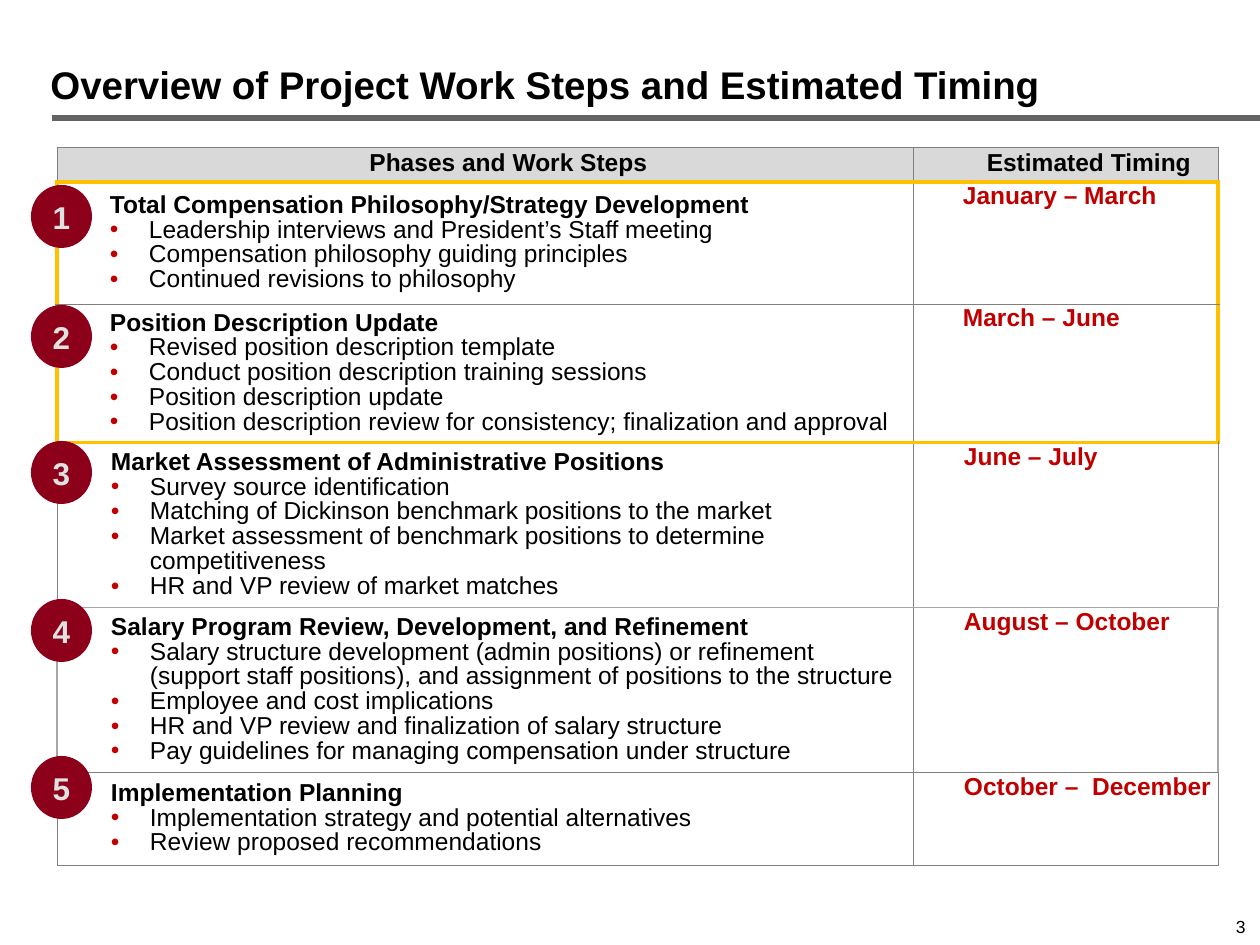
from dataclasses import dataclass

from lxml import etree
from pptx import Presentation
from pptx.dml.color import RGBColor
from pptx.enum.shapes import MSO_CONNECTOR, MSO_SHAPE
from pptx.enum.text import MSO_ANCHOR, PP_ALIGN
from pptx.oxml.ns import qn
from pptx.util import Emu, Pt

LEFT, CENTER, RIGHT = PP_ALIGN.LEFT, PP_ALIGN.CENTER, PP_ALIGN.RIGHT
TOP, MIDDLE, BOTTOM = MSO_ANCHOR.TOP, MSO_ANCHOR.MIDDLE, MSO_ANCHOR.BOTTOM
OVAL, STRAIGHT = MSO_SHAPE.OVAL, MSO_CONNECTOR.STRAIGHT
PX_PER_INCH = 126


@dataclass(frozen=True)
class Theme:
    font: str = "Arial"
    ink: str = "000000"
    accent: str = "C00000"
    badge: str = "8C0019"
    badge_ink: str = "E0E1E1"
    header: str = "D9D9D9"
    rule: str = "616365"
    title_size: int = 22
    table_size: int = 14
    badge_size: int = 18
    page_size: int = 10
    line_spacing: float = 0.9


@dataclass(frozen=True)
class Edge:
    color: str
    points: float


@dataclass(frozen=True)
class Phase:
    title: str
    steps: tuple[str, ...]
    timing: str
    height: int
    badge_top: int
    indent: int
    side: Edge
    bottom: Edge


THEME = Theme()
GRAY, GOLD, SILVER = Edge("808080", 0.5), Edge("FFC000", 2.25), Edge("A6A6A6", 1)

TABLE_LEFT, TABLE_TOP = 57, 147
COLUMNS = (856, 305)
HEADER_HEIGHT = 35
HEADINGS = ("Phases and Work Steps", "Estimated Timing")
HEADER_INDENT, HANGING = 47, 39

PHASES = (
    Phase("Total Compensation Philosophy/Strategy Development",
          ("Leadership interviews and President’s Staff meeting",
           "Compensation philosophy guiding principles",
           "Continued revisions to philosophy"),
          "January – March", 122, 185, 47, GOLD, GRAY),
    Phase("Position Description Update",
          ("Revised position description template",
           "Conduct position description training sessions",
           "Position description update",
           "Position description review for consistency; finalization and approval"),
          "March – June", 129, 305, 47, GOLD, GOLD),
    Phase("Market Assessment of Administrative Positions",
          ("Survey source identification",
           "Matching of Dickinson benchmark positions to the market",
           "Market assessment of benchmark positions to determine competitiveness",
           "HR and VP review of market matches"),
          "June – July", 157, 441, 48, GRAY, SILVER),
    Phase("Salary Program Review, Development, and Refinement",
          ("Salary structure development (admin positions) or refinement "
           "(support staff positions), and assignment of positions to the structure",
           "Employee and cost implications",
           "HR and VP review and finalization of salary structure",
           "Pay guidelines for managing compensation under structure"),
          "August – October", 154, 599, 48, SILVER, GRAY),
    Phase("Implementation Planning",
          ("Implementation strategy and potential alternatives",
           "Review proposed recommendations"),
          "October –  December", 93, 756, 48, GRAY, GRAY),
)


def px(length: int) -> Emu:
    return Emu(round(length * 914400 / PX_PER_INCH))


def apply(target, formats: dict) -> None:
    for name, value in formats.items():
        setattr(target, name, value)


def write(paragraph, text: str, size: int, color: str, bold: bool = True,
          align=LEFT, spacing: float = THEME.line_spacing) -> None:
    apply(paragraph, {"alignment": align, "line_spacing": spacing})
    run = paragraph.add_run()
    run.text = text
    apply(run.font, {"name": THEME.font, "size": Pt(size), "bold": bold})
    run.font.color.rgb = RGBColor.from_string(color)


def add_solid(parent, color: str) -> None:
    fill = etree.SubElement(parent, qn("a:solidFill"))
    etree.SubElement(fill, qn("a:srgbClr"), val=color)


def indent(paragraph, margin: int, hanging: int = 0) -> None:
    properties = paragraph._p.get_or_add_pPr()
    properties.set("marL", str(px(margin + hanging)))
    properties.set("indent", str(-px(hanging)))
    if hanging:
        bullet_color = etree.SubElement(properties, qn("a:buClr"))
        etree.SubElement(bullet_color, qn("a:srgbClr"), val=THEME.accent)
        etree.SubElement(properties, qn("a:buFont"), typeface=THEME.font)
        etree.SubElement(properties, qn("a:buChar"), char="•")


def set_borders(cell, left: Edge, right: Edge, top: Edge, bottom: Edge) -> None:
    properties = cell._tc.get_or_add_tcPr()
    sides = {"L": left, "R": right, "T": top, "B": bottom}
    for position, (side, edge) in enumerate(sides.items()):
        line = etree.Element(qn(f"a:ln{side}"), w=str(Pt(edge.points)))
        add_solid(line, edge.color)
        properties.insert(position, line)


def format_cell(cell, anchor, inset: int) -> None:
    apply(cell, {"vertical_anchor": anchor, "margin_left": px(inset),
                 "margin_right": px(inset), "margin_top": px(3), "margin_bottom": px(3)})


def add_text(slide, box: tuple[int, ...], text: str, size: int, bold: bool,
             anchor, align) -> None:
    frame = slide.shapes.add_textbox(*map(px, box)).text_frame
    apply(frame, {"word_wrap": True, "vertical_anchor": anchor})
    write(frame.paragraphs[0], text, size, THEME.ink, bold, align)


def add_rule(slide, left: int, right: int, y: int) -> None:
    rule = slide.shapes.add_connector(STRAIGHT, px(left), px(y), px(right), px(y))
    rule.line.color.rgb = RGBColor.from_string(THEME.rule)
    rule.line.width = Pt(3)
    etree.SubElement(rule._element.spPr, qn("a:effectLst"))


def add_schedule(slide) -> None:
    heights = (HEADER_HEIGHT, *(phase.height for phase in PHASES))
    table = slide.shapes.add_table(
        len(heights), len(COLUMNS), px(TABLE_LEFT), px(TABLE_TOP),
        px(sum(COLUMNS)), px(sum(heights))).table
    apply(table, {"first_row": False, "horz_banding": False})
    for column, width in zip(table.columns, COLUMNS):
        column.width = px(width)
    for row, height in zip(table.rows, heights):
        row.height = px(height)

    # Header row
    for cell, heading in zip(table.rows[0].cells, HEADINGS):
        format_cell(cell, MIDDLE, 6)
        cell.fill.solid()
        cell.fill.fore_color.rgb = RGBColor.from_string(THEME.header)
        set_borders(cell, GRAY, GRAY, GRAY, GOLD)
        paragraph = cell.text_frame.paragraphs[0]
        indent(paragraph, HEADER_INDENT)
        write(paragraph, heading, THEME.table_size, THEME.ink, align=CENTER)

    # Phase rows; each one's top edge is the bottom edge of the row above
    top = GOLD
    for number, phase in enumerate(PHASES, start=1):
        work, timing = table.rows[number].cells
        format_cell(work, MIDDLE, 6)
        format_cell(timing, TOP, 3)
        work.fill.background()
        timing.fill.background()
        set_borders(work, phase.side, GRAY, top, phase.bottom)
        set_borders(timing, GRAY, phase.side, top, phase.bottom)
        top = phase.bottom

        for cell, text, color in ((work, phase.title, THEME.ink),
                                  (timing, phase.timing, THEME.accent)):
            paragraph = cell.text_frame.paragraphs[0]
            indent(paragraph, phase.indent)
            write(paragraph, text, THEME.table_size, color)
        for step in phase.steps:
            paragraph = work.text_frame.add_paragraph()
            indent(paragraph, phase.indent, HANGING)
            write(paragraph, step, THEME.table_size, THEME.ink, bold=False)


def add_badge(slide, number: int, top: int) -> None:
    badge = slide.shapes.add_shape(OVAL, px(31), px(top), px(61), px(63))
    badge.shadow.inherit = False
    badge.fill.solid()
    badge.fill.fore_color.rgb = RGBColor.from_string(THEME.badge)
    badge.line.fill.background()
    apply(badge.text_frame, {"word_wrap": False, "vertical_anchor": MIDDLE})
    write(badge.text_frame.paragraphs[0], str(number), THEME.badge_size,
          THEME.badge_ink, align=CENTER, spacing=1.0)


def main() -> None:
    presentation = Presentation()
    apply(presentation, {"slide_width": px(1260), "slide_height": px(945)})
    slide = presentation.slides.add_slide(presentation.slide_layouts[6])

    # Page number, title and its rule
    add_text(slide, (1182, 912, 76, 32), "3", THEME.page_size, False, MIDDLE, RIGHT)
    add_rule(slide, 52, 1260, 118)
    add_text(slide, (38, 10, 1201, 104), "Overview of Project Work Steps and Estimated Timing",
             THEME.title_size, True, BOTTOM, LEFT)

    # Schedule with numbered badges
    add_schedule(slide)
    for number, phase in enumerate(PHASES, start=1):
        add_badge(slide, number, phase.badge_top)

    presentation.save("out.pptx")


if __name__ == "__main__":
    main()
